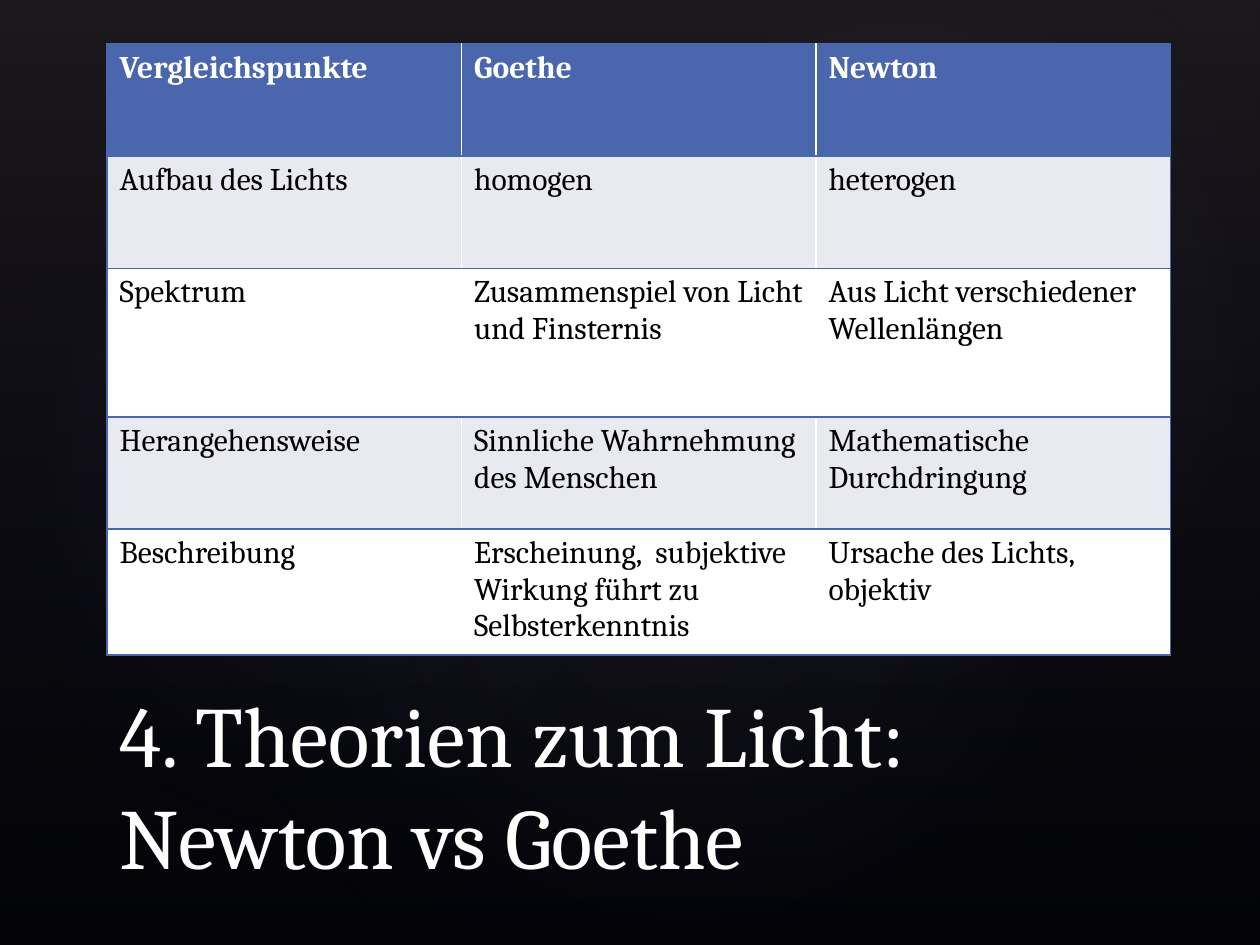
from dataclasses import dataclass

from lxml import etree
from pptx import Presentation
from pptx.dml.color import RGBColor
from pptx.enum.shapes import MSO_SHAPE
from pptx.enum.text import MSO_ANCHOR
from pptx.oxml import parse_xml
from pptx.oxml.ns import nsdecls, qn
from pptx.util import Inches, Pt


@dataclass(frozen=True)
class Theme:
    font: str = "Cambria"
    background: str = "000000"
    haze: str = "504652"
    glow: str = "C4BCC6"
    night: str = "242852"
    accent: str = "4A66AC"
    band: str = "E9EAF1"
    light: str = "FFFFFF"
    dark: str = "000000"
    title_size: int = 49
    table_size: int = 18
    border_width: int = 1


@dataclass(frozen=True)
class Stop:
    position: int
    color: str
    opacity: int


@dataclass(frozen=True)
class Backdrop:
    kind: MSO_SHAPE
    left: float
    top: float
    width: float
    height: float
    rotation: float
    stops: tuple[Stop, Stop]


@dataclass(frozen=True)
class Comparison:
    aspect: str
    goethe: str
    newton: str
    height: float = 0.89


THEME = Theme()
LINEAR = '<a:lin ang="5400000" scaled="0"/>'
RADIAL = '<a:path path="circle"><a:fillToRect l="50000" t="50000" r="50000" b="50000"/></a:path>'


def glow(left: float, top: float, width: float, height: float,
         rotation: float, opacity: int) -> Backdrop:
    stops = (Stop(0, THEME.glow, opacity), Stop(58, THEME.night, 0))
    return Backdrop(MSO_SHAPE.OVAL, left, top, width, height, rotation, stops)


BACKDROPS = (
    Backdrop(MSO_SHAPE.RECTANGLE, 0, 0, 10, 7.5, 0,
             (Stop(0, THEME.haze, 36), Stop(100, THEME.night, 10))),
    glow(1.5, 1.14, 7.92, 6.24, 328.7, 7),
    glow(-0.3, 1.28, 6.06, 4.9, 294.3, 8),
    glow(3.58, 0.13, 7.09, 5.2, 328.7, 8),
)

COMPARISONS = (
    Comparison("Vergleichspunkte", "Goethe", "Newton"),
    Comparison("Aufbau des Lichts", "homogen", "heterogen"),
    Comparison("Spektrum", "Zusammenspiel von Licht und Finsternis",
               "Aus Licht verschiedener Wellenlängen", 1.18),
    Comparison("Herangehensweise", "Sinnliche Wahrnehmung des Menschen",
               "Mathematische Durchdringung"),
    Comparison("Beschreibung",
               "Erscheinung,  subjektive Wirkung führt zu Selbsterkenntnis",
               "Ursache des Lichts, objektiv"),
)


def style_text(frame, size: int, color: str, bold: bool = False) -> None:
    for paragraph in frame.paragraphs:
        for run in paragraph.runs:
            run.font.name = THEME.font
            run.font.size = Pt(size)
            run.font.bold = bold
            run.font.color.rgb = RGBColor.from_string(color)


def draw_backdrop(slide, backdrop: Backdrop) -> None:
    shape = slide.shapes.add_shape(
        backdrop.kind, Inches(backdrop.left), Inches(backdrop.top),
        Inches(backdrop.width), Inches(backdrop.height))
    shape.rotation = backdrop.rotation
    shape.shadow.inherit = False
    shape.line.fill.background()
    stops = "".join(
        f'<a:gs pos="{stop.position * 1000}"><a:srgbClr val="{stop.color}">'
        f'<a:alpha val="{stop.opacity * 1000}"/></a:srgbClr></a:gs>'
        for stop in backdrop.stops)
    direction = RADIAL if backdrop.kind == MSO_SHAPE.OVAL else LINEAR
    gradient = parse_xml(
        f'<a:gradFill {nsdecls("a")} rotWithShape="1">'
        f'<a:gsLst>{stops}</a:gsLst>{direction}</a:gradFill>')
    shape._element.spPr.find(qn("a:prstGeom")).addnext(gradient)


def draw_border(cell, side: str) -> None:
    properties = cell._tc.get_or_add_tcPr()
    border = etree.SubElement(properties, qn(f"a:{side}"),
                              w=str(Pt(THEME.border_width)))
    fill = etree.SubElement(border, qn("a:solidFill"))
    etree.SubElement(fill, qn("a:srgbClr"), val=THEME.accent)


def draw_table(slide, comparisons: tuple[Comparison, ...]) -> None:
    table = slide.shapes.add_table(
        len(comparisons), 3, Inches(0.85), Inches(0.35), Inches(8.44),
        Inches(sum(row.height for row in comparisons))).table
    for row_index, comparison in enumerate(comparisons):
        table.rows[row_index].height = Inches(comparison.height)
        header = row_index == 0
        fill = THEME.accent if header else (THEME.light, THEME.band)[row_index % 2]
        texts = (comparison.aspect, comparison.goethe, comparison.newton)
        for column, text in enumerate(texts):
            cell = table.cell(row_index, column)
            cell.text_frame.text = text
            style_text(cell.text_frame, THEME.table_size,
                       THEME.light if header else THEME.dark, header)
            outer = {0: ("lnL",), 2: ("lnR",)}.get(column, ())
            for side in (*outer, "lnT", "lnB"):
                draw_border(cell, side)
            cell.fill.solid()
            cell.fill.fore_color.rgb = RGBColor.from_string(fill)


def draw_title(slide, text: str) -> None:
    title = slide.shapes.add_textbox(
        Inches(0.85), Inches(6.09), Inches(8.25), Inches(1)).text_frame
    title.word_wrap = True
    title.vertical_anchor = MSO_ANCHOR.BOTTOM
    title.text = text
    style_text(title, THEME.title_size, THEME.light)


def main() -> None:
    presentation = Presentation()
    presentation.slide_width = Inches(10)
    presentation.slide_height = Inches(7.5)
    slide = presentation.slides.add_slide(presentation.slide_layouts[6])
    slide.background.fill.solid()
    slide.background.fill.fore_color.rgb = RGBColor.from_string(THEME.background)
    for backdrop in BACKDROPS:
        draw_backdrop(slide, backdrop)
    draw_title(slide, "4. Theorien zum Licht: Newton vs Goethe")
    draw_table(slide, COMPARISONS)
    presentation.save("out.pptx")


if __name__ == "__main__":
    main()
